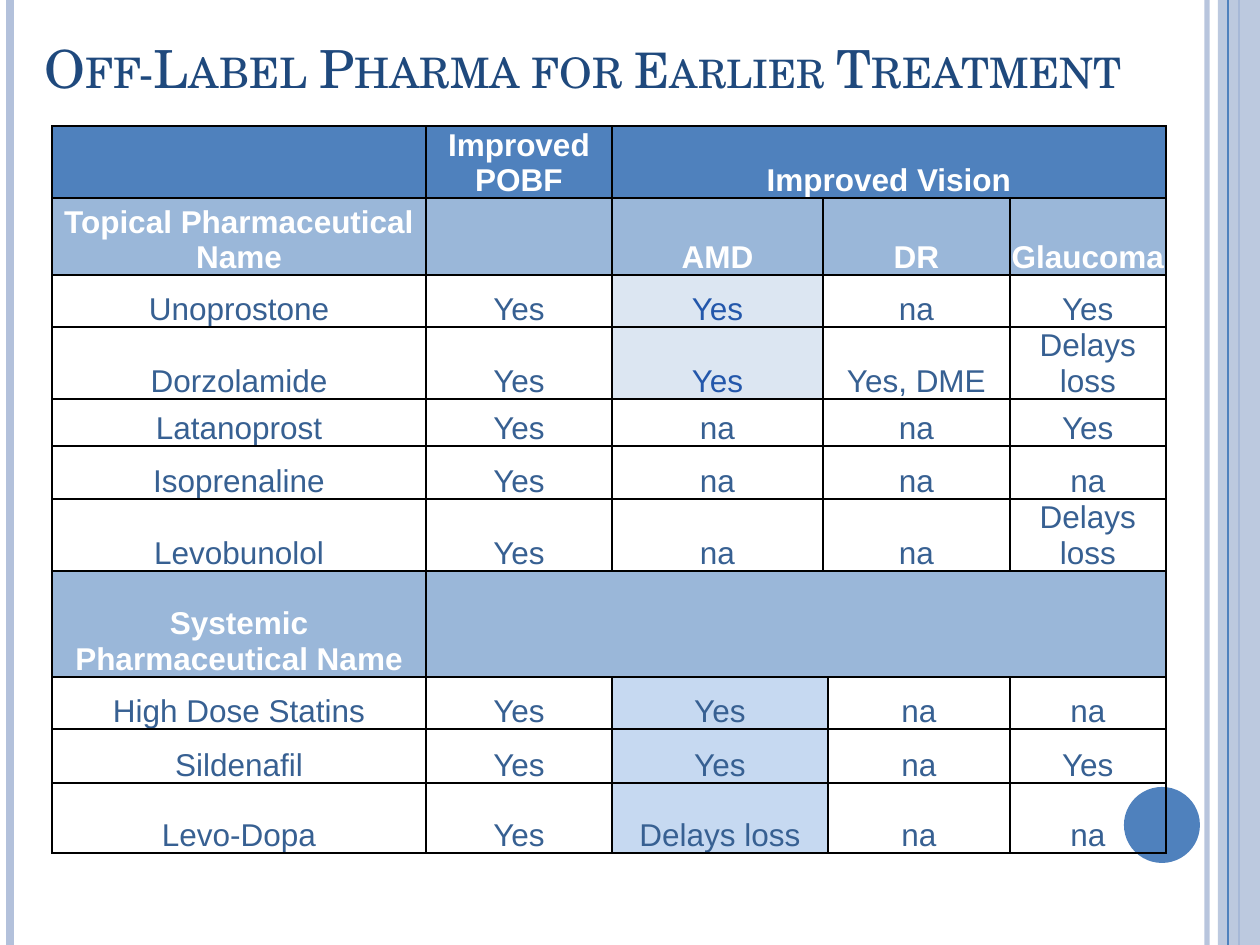
from lxml import etree
from pptx import Presentation
from pptx import util as u
from pptx.dml import color
from pptx.enum import shapes, text
from pptx.oxml import ns

PX = 914400 // 126
COLOURS = {
    "blue": "4F81BD", "pale_blue": "B3C1DB", "section": "9AB7D9",
    "topical": "DCE6F2", "systemic": "C6D9F1", "title": "1F497D",
    "text": "376092", "topical_text": "2357AB", "white": "FFFFFF", "black": "000000",
}
TITLE_FONT, TABLE_FONT = "TeX Gyre Schola", "Arial"


def rgb(name):
    return color.RGBColor.from_string(COLOURS[name])


def px(*lengths):
    return [u.Emu(length * PX) for length in lengths]


class SlideBuilder:
    """Holds the style and the current slide."""

    def __init__(self, slide):
        self.slide = slide

    def set_alpha(self, element, percent):
        for colour in element.iter(ns.qn("a:srgbClr")):
            etree.SubElement(colour, ns.qn("a:alpha"), val=str(percent * 1000))

    def add_run(self, paragraph, words, size, font, colour, bold=False):
        run = paragraph.add_run()
        run.text = words
        run.font.size = u.Pt(size)
        run.font.name = font
        run.font.bold = bold
        run.font.color.rgb = rgb(colour)
        return run

    def title(self, box, parts):
        title = self.slide.shapes.title
        title.left, title.top, title.width, title.height = px(*box)
        frame = title.text_frame
        frame.word_wrap = True
        frame.auto_size = text.MSO_AUTO_SIZE.NONE
        frame.vertical_anchor = text.MSO_ANCHOR.BOTTOM
        paragraph = frame.paragraphs[0]
        paragraph.alignment = text.PP_ALIGN.LEFT
        for words, size in parts:
            run = self.add_run(paragraph, words, size, TITLE_FONT, "title")
            run.font._element.set("cap", "small")

    def vertical_line(self, x, colour, width, alpha=100):
        line = self.slide.shapes.add_connector(
            shapes.MSO_CONNECTOR.STRAIGHT, *px(x, 0, x, 945))
        line.line.color.rgb = rgb(colour)
        line.line.width = u.Pt(width)
        properties = line._element.spPr
        if alpha < 100:
            self.set_alpha(properties, alpha)
        etree.SubElement(properties, ns.qn("a:effectLst"))

    def shape(self, kind, box, colour, alpha=100):
        shape = self.slide.shapes.add_shape(kind, *px(*box))
        shape.shadow.inherit = False
        shape.fill.solid()
        shape.fill.fore_color.rgb = rgb(colour)
        shape.line.fill.background()
        if alpha < 100:
            self.set_alpha(shape._element.spPr, alpha)

    def cell_borders(self, cell):
        properties = cell._tc.get_or_add_tcPr()
        for side in ("lnL", "lnR", "lnT", "lnB"):
            border = etree.SubElement(properties, ns.qn("a:" + side), w=str(u.Pt(1)))
            fill = etree.SubElement(border, ns.qn("a:solidFill"))
            etree.SubElement(fill, ns.qn("a:srgbClr"), val=COLOURS["black"])

    def cell(self, cell, words, fill, colour, bold):
        self.cell_borders(cell)
        cell.margin_left = cell.margin_right = cell.margin_top = u.Inches(0.01)
        cell.margin_bottom = 0
        cell.vertical_anchor = text.MSO_ANCHOR.BOTTOM
        if fill:
            cell.fill.solid()
            cell.fill.fore_color.rgb = rgb(fill)
        else:
            cell.fill.background()
        paragraph = cell.text_frame.paragraphs[0]
        paragraph.alignment = text.PP_ALIGN.CENTER
        if words:
            self.add_run(paragraph, words, 18, TABLE_FONT, colour, bold)

    def table(self, left, top, widths, heights, rows, style):
        """None in a row continues the cell to its left."""
        frame = self.slide.shapes.add_table(
            len(rows), len(widths), *px(left, top, sum(widths), sum(heights)))
        table = frame.table
        table.first_row = table.horz_banding = False
        for column, width in zip(table.columns, px(*widths)):
            column.width = width
        for row, height in zip(table.rows, px(*heights)):
            row.height = height
        for r, row in enumerate(rows):
            start = 0
            for c, words in enumerate(row):
                if words is not None:
                    start = c
                self.cell(table.cell(r, c), words, *style(r, start))
                if words is None and (c + 1 == len(row) or row[c + 1] is not None):
                    table.cell(r, start).merge(table.cell(r, c))


# Table content
SYSTEMIC_ROW = 7
ROWS = [
    ["", "Improved POBF", "Improved Vision", None, None, None],
    ["Topical Pharmaceutical Name", "", "AMD", "DR", None, "Glaucoma"],
    ["Unoprostone", "Yes", "Yes", "na", None, "Yes"],
    ["Dorzolamide", "Yes", "Yes", "Yes, DME", None, "Delays loss"],
    ["Latanoprost", "Yes", "na", "na", None, "Yes"],
    ["Isoprenaline", "Yes", "na", "na", None, "na"],
    ["Levobunolol", "Yes", "na", "na", None, "Delays loss"],
    ["Systemic Pharmaceutical Name", "", None, None, None, None],
    ["High Dose Statins", "Yes", "Yes", None, "na", "na"],
    ["Sildenafil", "Yes", "Yes", None, "na", "Yes"],
    ["Levo-Dopa", "Yes", "Delays loss", None, "na", "na"],
]
COLUMN_WIDTHS = [374, 186, 211, 5, 182, 156]
ROW_HEIGHTS = [72, 77, 52, 72, 47, 53, 72, 106, 52, 54, 70]


def cell_style(row, column):
    """Fill, text colour and bold of a cell."""
    if row == 0:
        return "blue", "white", True
    if row in (1, SYSTEMIC_ROW):
        return "section", "white", True
    if column == 2 and row in (2, 3):
        return "topical", "topical_text", False
    if column == 2 and row > SYSTEMIC_ROW:
        return "systemic", "text", False
    return None, "text", False


def main():
    presentation = Presentation()
    presentation.slide_width, presentation.slide_height = px(1260, 945)
    builder = SlideBuilder(presentation.slides.add_slide(presentation.slide_layouts[5]))

    # Side bars and circle
    builder.vertical_line(1207, "pale_blue", 3, alpha=93)
    builder.vertical_line(10, "pale_blue", 4.5)
    builder.vertical_line(1239, "blue", 1.5)
    builder.shape(shapes.MSO_SHAPE.RECTANGLE, (1218, 0, 42, 945), "pale_blue", alpha=87)
    builder.vertical_line(1228, "blue", 0.75)
    builder.shape(shapes.MSO_SHAPE.OVAL, (1124, 787, 76, 76), "blue")

    # Title
    builder.title((32, 10, 1155, 95), [
        ("Off-Label Pharma for ", 30), ("Earlier", 28), (" Treatment", 30)])

    # Treatment table
    builder.table(52, 126, COLUMN_WIDTHS, ROW_HEIGHTS, ROWS, cell_style)

    presentation.save("out.pptx")


if __name__ == "__main__":
    main()
